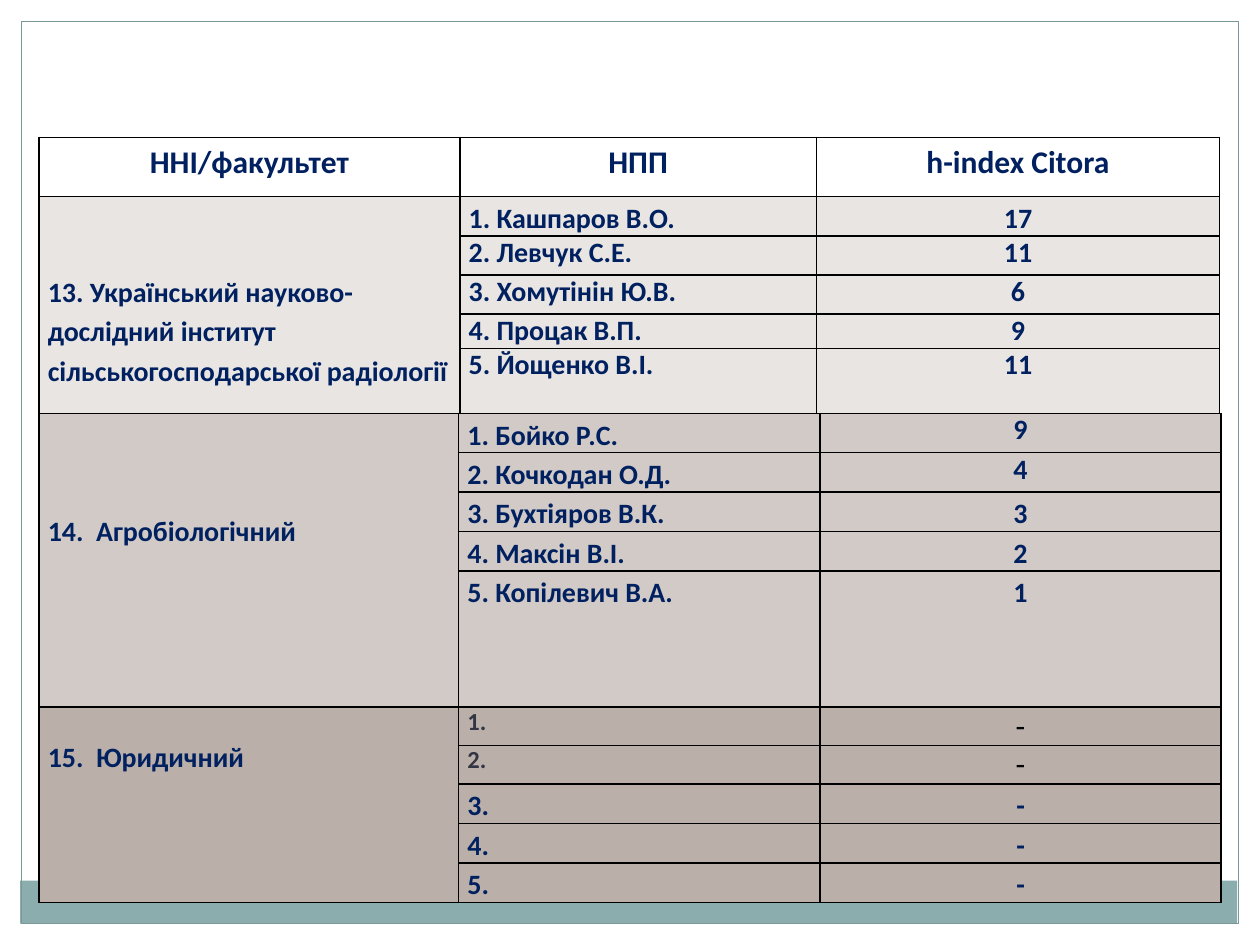
from lxml import etree
from pptx import Presentation
from pptx.dml.color import RGBColor
from pptx.enum.shapes import MSO_SHAPE
from pptx.enum.text import PP_ALIGN
from pptx.oxml.ns import qn
from pptx.util import Inches, Pt

NAVY, GREY, BLACK = "002060", "323543", "000000"


def color(hex_value):
    return RGBColor.from_string(hex_value)


def write_cell(cell, text, fill=None, size=16, ink=NAVY, bold=True,
               align=PP_ALIGN.LEFT, spacing=1.15, top=0):
    cell.margin_left = cell.margin_right = Inches(0.07)
    cell.margin_top, cell.margin_bottom = Inches(top), 0
    paragraph = cell.text_frame.paragraphs[0]
    paragraph.alignment = align
    paragraph.line_spacing = spacing
    run = paragraph.add_run()
    run.text = text
    run.font.name = "Calibri"
    run.font.size = Pt(size)
    run.font.bold = bold
    run.font.color.rgb = color(ink)
    if fill:
        cell.fill.solid()
        cell.fill.fore_color.rgb = color(fill)
    else:
        cell.fill.background()


prs = Presentation()
prs.slide_width, prs.slide_height = Inches(10), Inches(7.5)
slide = prs.slides.add_slide(prs.slide_layouts[6])

# Bottom band and page frame
band = slide.shapes.add_shape(MSO_SHAPE.RECTANGLE, Inches(0.16), Inches(6.99),
                              Inches(9.66), Inches(0.34))
band.shadow.inherit = False
band.fill.solid()
band.fill.fore_color.rgb = color("8CADAE")
band.line.fill.background()

frame = slide.shapes.add_shape(MSO_SHAPE.RECTANGLE, Inches(0.17), Inches(0.17),
                               Inches(9.66), Inches(7.16))
frame.shadow.inherit = False
frame.fill.background()
frame.line.color.rgb = color("7C999A")
frame.line.width = Pt(0.75)

# Faculties: name, fill, space above the name, name line spacing, staff rows
# Staff row: name, h-index, name format, index format
single = {"spacing": 1.0}
grey_number = {"size": 14, "ink": GREY, "spacing": 1.0}
black_dash = {"size": 18, "ink": BLACK, "bold": False, "spacing": 1.0}

radiology = ("13. Український науково-дослідний інститут сільськогосподарської радіології",
             "E8E5E2", 0.59, 1.15, [
                 ("1. Кашпаров В.О.", "17", {}, {}),
                 ("2. Левчук С.Е.", "11", single, single),
                 ("3. Хомутінін Ю.В.", "6", single, single),
                 ("4. Процак В.П.", "9", single, single),
                 ("5. Йощенко В.І.", "11", single, single)])
agrobiology = ("14.  Агробіологічний", "D1CAC6", 0.81, 1.0, [
    ("1. Бойко Р.С.", "9", {}, single),
    ("2. Кочкодан О.Д.", "4", {}, single),
    ("3. Бухтіяров В.К.", "3", {}, {}),
    ("4. Максін В.І.", "2", {}, {}),
    ("5. Копілевич В.А.", "1", {}, {})])
law = ("15.  Юридичний", "BAB0A9", 0.27, 1.0, [
    ("1.", "-", grey_number, black_dash),
    ("2.", "-", grey_number, black_dash),
    ("3.", "-", {}, {}),
    ("4.", "-", {}, {}),
    ("5.", "-", {}, {})])

# Tables: top, column widths, row heights, header, faculties
tables = [
    (1.09, [3.34, 2.83, 3.2], [0.47, 0.3, 0.31, 0.31, 0.26, 0.65],
     ["ННІ/факультет", "НПП", "h-index Citora"], [radiology]),
    (3.28, [3.33, 2.87, 3.18], [0.3] * 4 + [1.06] + [0.3] * 5,
     [], [agrobiology, law]),
]

for top, widths, heights, header, faculties in tables:
    table = slide.shapes.add_table(
        len(heights), len(widths), Inches(0.31), Inches(top),
        Inches(sum(widths)), Inches(sum(heights))).table
    table.first_row = bool(header)
    table.horz_banding = False
    for column, width in zip(table.columns, widths):
        column.width = Inches(width)
    for row, height in zip(table.rows, heights):
        row.height = Inches(height)

    # Black borders, placed before the fills as the schema asks
    for cell in table.iter_cells():
        properties = cell._tc.get_or_add_tcPr()
        for side in ("a:lnL", "a:lnR", "a:lnT", "a:lnB"):
            border = etree.SubElement(properties, qn(side), w=str(Pt(1)))
            solid = etree.SubElement(border, qn("a:solidFill"))
            etree.SubElement(solid, qn("a:srgbClr"), val=BLACK)

    for index, title in enumerate(header):
        write_cell(table.cell(0, index), title, size=18, align=PP_ALIGN.CENTER)

    row_index = 1 if header else 0
    for faculty, fill, space_above, spacing, staff in faculties:
        faculty_cell = table.cell(row_index, 0)
        faculty_cell.merge(table.cell(row_index + len(staff) - 1, 0))
        write_cell(faculty_cell, faculty, fill, spacing=spacing, top=space_above)
        for person, h_index, person_format, index_format in staff:
            write_cell(table.cell(row_index, 1), person, fill, **person_format)
            write_cell(table.cell(row_index, 2), h_index, fill,
                       align=PP_ALIGN.CENTER, **index_format)
            row_index += 1

prs.save("out.pptx")
